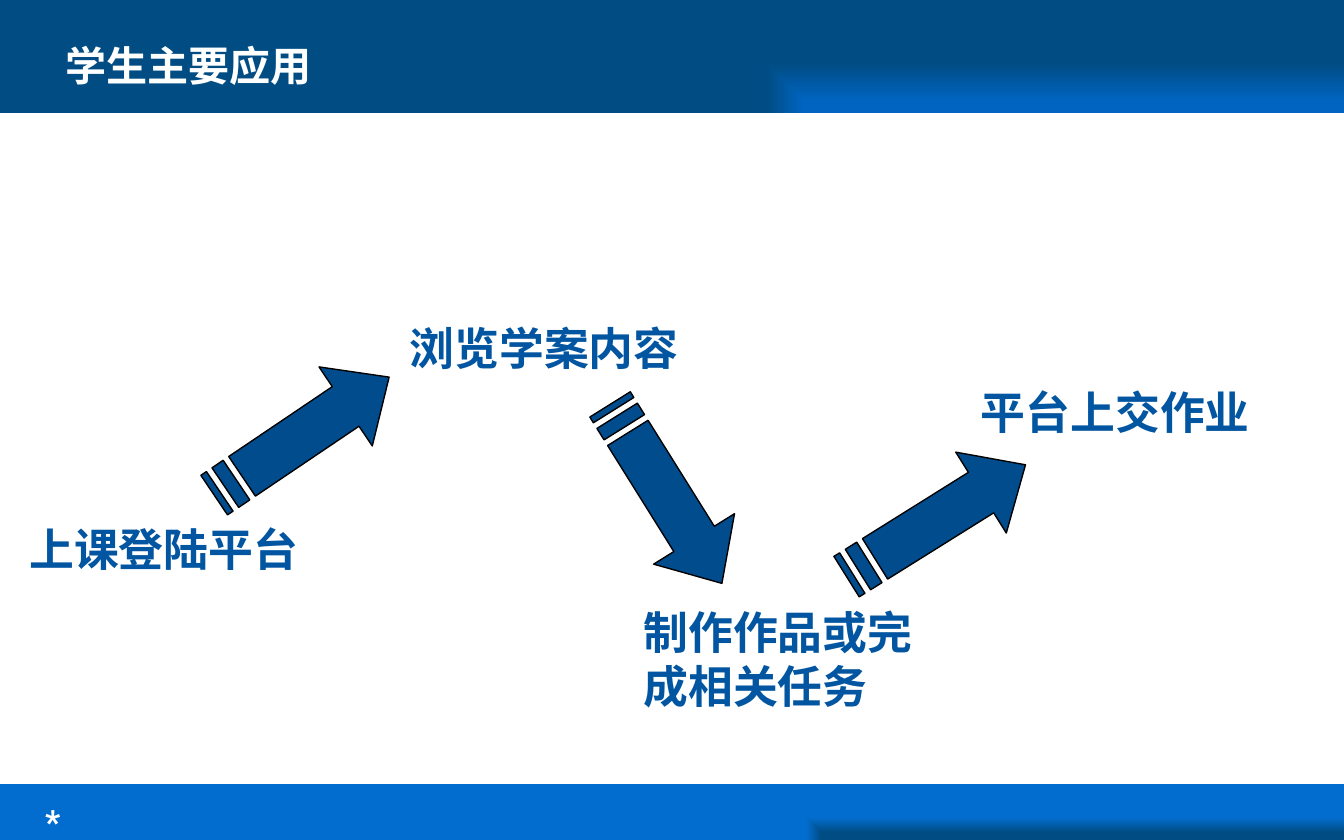
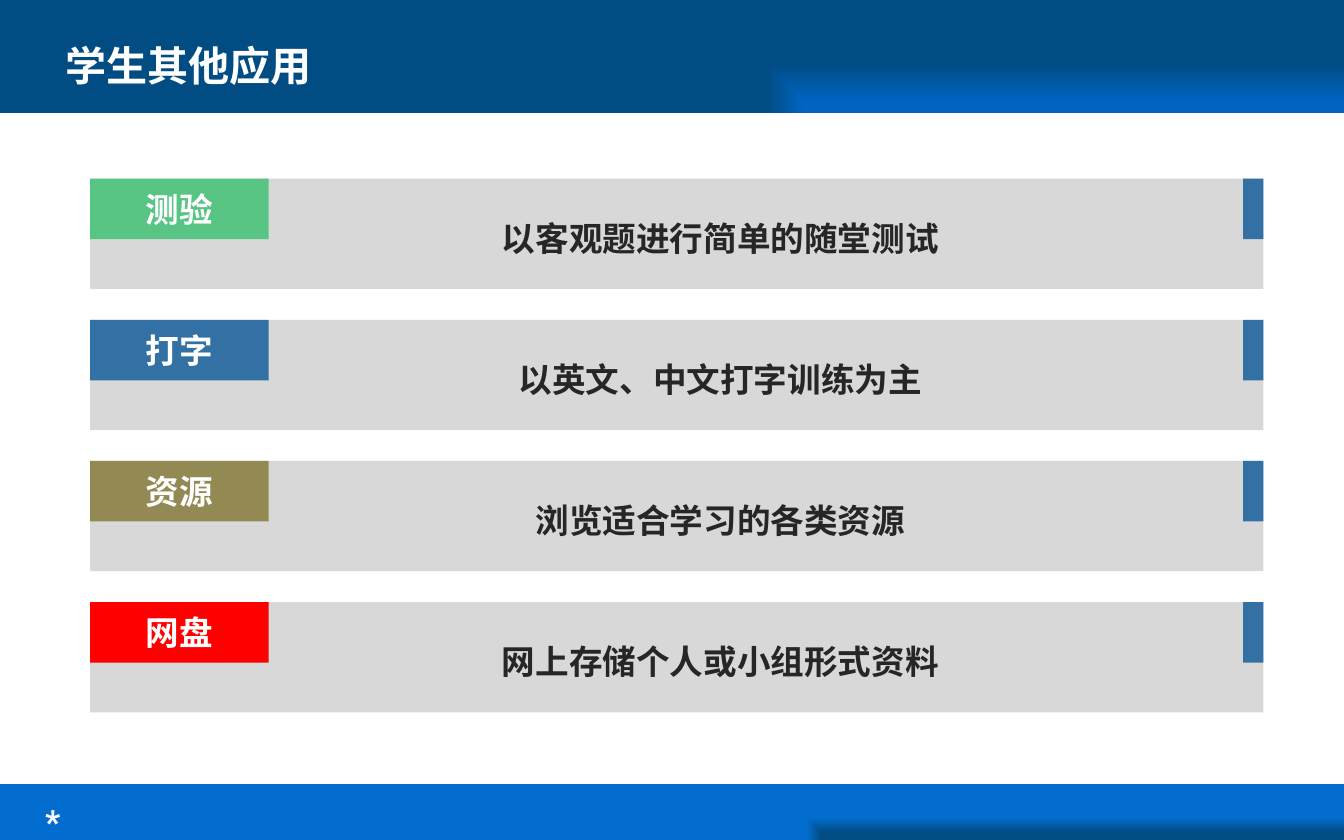
import pptx
import pptx.util
import pptx.dml.color
import pptx.enum.shapes
import pptx.enum.text
import pptx.oxml
import pptx.oxml.ns

Inches = pptx.util.Inches
ALIGN = pptx.enum.text.PP_ALIGN
ANCHOR = pptx.enum.text.MSO_ANCHOR

CJK = "Noto Sans CJK SC"
WHITE = "FFFFFF"
STEP_BLUE = "0255A0"
ARROW_BLUE = "014C8D"
ROW_GREY = "D8D8D8"
ROW_BLUE = "3371A4"
ROW_TEXT = "262626"

BANDS = [
    ((0, 5.83, 10, 0.42), [(0, "014C83"), (26, "014C83"), (80, "026DCE"), (100, "026DCE")]),
    ((0, -0.02, 10, 0.86), [(0, "0064C0"), (21, "0064C0"), (86, "014C83"), (100, "014C83")]),
]
TITLE_BOX = (0.32, 0.13, 6.38, 0.71)
FOOTER_BOX = (0.2, 5.91, 1.57, 0.26)

STEPS_TITLE = " 学生主要应用"
STEPS = [
    ("上课登陆平台", (0.12, 3.83, 2.91, 0.5)),
    ("浏览学案内容", (2.95, 2.34, 2.68, 0.5)),
    ("制作作品或完成相关任务", (4.69, 4.45, 2.2, 0.91)),
    ("平台上交作业", (7.2, 2.81, 2.8, 0.5)),
]
ARROWS = [(1.46, 2.89, 326), (4.17, 3.32, 58), (6.18, 3.52, 328)]
ARROW_LENGTH, ARROW_HEIGHT = 1.57, 0.71
STRIPES = [(0.1, 0.2), (0, 0.05)]
SHAFT_START, HEAD_START = 0.25, 1.18

USES_TITLE = " 学生其他应用"
USES = [
    ("测验", "以客观题进行简单的随堂测试", "58C584"),
    ("打字", "以英文、中文打字训练为主", ROW_BLUE),
    ("资源", "浏览适合学习的各类资源", "938953"),
    ("网盘", "网上存储个人或小组形式资料", "FF0000"),
]
ROW_LEFT, ROW_TOP, ROW_PITCH = 0.67, 1.33, 1.05
ROW_WIDTH, ROW_HEIGHT, TAG_HEIGHT = 8.73, 0.82, 0.45
EDGE_WIDTH = 0.15


def rgb(hex_color):
    return pptx.dml.color.RGBColor.from_string(hex_color)


def inches(lengths):
    return [Inches(length) for length in lengths]


def add_run(paragraph, text, size, color, font=CJK, italic=False):
    run = paragraph.add_run()
    run.text = text
    run.font.size = pptx.util.Pt(size)
    run.font.bold = True
    run.font.italic = italic
    run.font.name = font
    run.font.color.rgb = rgb(color)
    east_asian = pptx.oxml.parse_xml(
        f'<a:ea {pptx.oxml.ns.nsdecls("a")} typeface="{CJK}"/>')
    run.font._element.find(pptx.oxml.ns.qn("a:latin")).addnext(east_asian)


def add_rect(shapes, box, fill=None):
    rect = shapes.add_shape(pptx.enum.shapes.MSO_SHAPE.RECTANGLE, *inches(box))
    rect.shadow.inherit = False
    rect.line.fill.background()
    if fill:
        rect.fill.solid()
        rect.fill.fore_color.rgb = rgb(fill)
    return rect


def add_text(shapes, box, text, size, color, align=ALIGN.LEFT):
    label = shapes.add_textbox(*inches(box))
    label.text_frame.word_wrap = True
    paragraph = label.text_frame.paragraphs[0]
    paragraph.alignment = align
    add_run(paragraph, text, size, color)
    return label


def add_band(slide, box, stops):
    band = add_rect(slide.shapes, box)
    stop_xml = "".join(
        f'<a:gs pos="{pos * 1000}"><a:srgbClr val="{color}"/></a:gs>' for pos, color in stops)
    gradient = pptx.oxml.parse_xml(
        f'<a:gradFill {pptx.oxml.ns.nsdecls("a")} rotWithShape="1"><a:gsLst>{stop_xml}</a:gsLst>'
        '<a:path path="rect"><a:fillToRect l="100000" t="100000"/></a:path></a:gradFill>')
    band._element.spPr.find(pptx.oxml.ns.qn("a:prstGeom")).addnext(gradient)


def add_framed_slide(deck, heading):
    slide = deck.slides.add_slide(deck.slide_layouts.get_by_name("Title Only"))
    for box, stops in BANDS:
        add_band(slide, box, stops)
    footer = add_text(slide.shapes, FOOTER_BOX, " ", 12, WHITE)
    footer.text_frame.paragraphs[0].runs[0].font.italic = True
    add_run(footer.text_frame.paragraphs[0], "*", 18, WHITE, "Roboto")

    title = slide.shapes.title
    title.left, title.top, title.width, title.height = inches(TITLE_BOX)
    title.text_frame.vertical_anchor = ANCHOR.MIDDLE
    title.text_frame.paragraphs[0].alignment = ALIGN.LEFT
    add_run(title.text_frame.paragraphs[0], heading, 22, WHITE, "Times New Roman")
    slide.shapes._spTree.append(title._element)
    return slide


def add_striped_arrow(slide, left, top, rotation):
    upper, lower = ARROW_HEIGHT / 4, ARROW_HEIGHT * 3 / 4
    shaft_and_head = [
        (SHAFT_START, upper), (HEAD_START, upper), (HEAD_START, 0),
        (ARROW_LENGTH, ARROW_HEIGHT / 2), (HEAD_START, ARROW_HEIGHT),
        (HEAD_START, lower), (SHAFT_START, lower),
    ]
    stripes = [[(a, upper), (b, upper), (b, lower), (a, lower)] for a, b in STRIPES]
    builder = slide.shapes.build_freeform(*inches(shaft_and_head[0]))
    for outline in [shaft_and_head] + stripes:
        points = [inches(point) for point in outline]
        if outline is not shaft_and_head:
            builder.move_to(*points[0])
        builder.add_line_segments(points[1:], close=True)
    arrow = builder.convert_to_shape()
    arrow.left, arrow.top = inches((left, top))
    arrow.rotation = rotation
    arrow.shadow.inherit = False
    arrow.fill.solid()
    arrow.fill.fore_color.rgb = rgb(ARROW_BLUE)
    arrow.line.color.rgb = rgb("000000")
    arrow.line.width = pptx.util.Pt(0.75)


def add_use_row(slide, top, tag, description, tag_color):
    row = slide.shapes.add_group_shape().shapes
    add_rect(row, (ROW_LEFT, top, ROW_WIDTH, ROW_HEIGHT), ROW_GREY)
    add_text(row, (2.71, top + 0.24, 5.3, 0.4), description, 18, ROW_TEXT, ALIGN.CENTER)
    edge_left = ROW_LEFT + ROW_WIDTH - EDGE_WIDTH
    add_rect(row, (edge_left, top, EDGE_WIDTH, TAG_HEIGHT), ROW_BLUE)
    tag_block = add_rect(row, (ROW_LEFT, top, 1.33, TAG_HEIGHT), tag_color)
    tag_block.text_frame.vertical_anchor = ANCHOR.MIDDLE
    paragraph = tag_block.text_frame.paragraphs[0]
    paragraph.alignment = ALIGN.CENTER
    add_run(paragraph, tag, 18, WHITE)


def main():
    deck = pptx.Presentation()
    deck.slide_width, deck.slide_height = Inches(10), Inches(6.25)

    steps_slide = add_framed_slide(deck, STEPS_TITLE)
    for step, box in STEPS:
        add_text(steps_slide.shapes, box, step, 24, STEP_BLUE)
    for arrow in ARROWS:
        add_striped_arrow(steps_slide, *arrow)

    uses_slide = add_framed_slide(deck, USES_TITLE)
    for index, use in enumerate(USES):
        add_use_row(uses_slide, ROW_TOP + index * ROW_PITCH, *use)

    deck.save("out.pptx")


if __name__ == "__main__":
    main()
